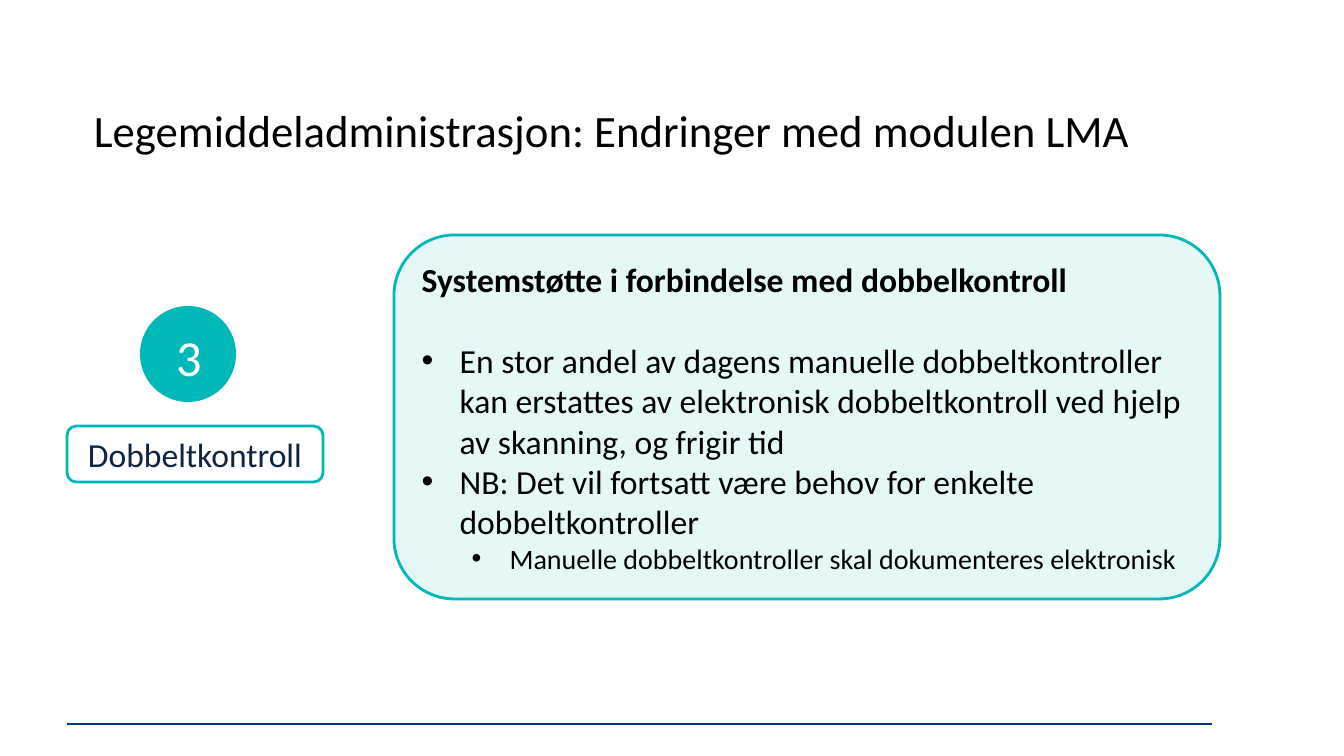
"""Build the slide about double checks in medication administration."""
from lxml import etree
from pptx import Presentation
from pptx.dml.color import RGBColor
from pptx.enum.shapes import MSO_CONNECTOR, MSO_SHAPE
from pptx.enum.text import MSO_ANCHOR, PP_ALIGN
from pptx.oxml.ns import qn
from pptx.util import Pt

PX = 914400 / 100.8
TEAL = RGBColor(0x00, 0xB8, 0xB7)
NAVY = RGBColor(0x0F, 0x24, 0x3E)
BLUE = RGBColor(0x04, 0x35, 0x85)
BLACK = RGBColor(0x00, 0x00, 0x00)
WHITE = RGBColor(0xFF, 0xFF, 0xFF)
ROUNDED, OVAL = MSO_SHAPE.ROUNDED_RECTANGLE, MSO_SHAPE.OVAL
LEFT, CENTER = PP_ALIGN.LEFT, PP_ALIGN.CENTER
MIDDLE = MSO_ANCHOR.MIDDLE


def px(*lengths):
    return [round(length * PX) for length in lengths]


def write(para, text, size=24, color=BLACK, bold=False, align=LEFT,
          bullet_left=None, level=0, before=0):
    para.alignment = align
    para.level = level
    para.space_before = Pt(before)
    if bullet_left:
        properties = para._p.get_or_add_pPr()
        left, hanging = px(bullet_left, -38)
        properties.set("marL", str(left))
        properties.set("indent", str(hanging))
        etree.SubElement(properties, qn("a:buFont")).set("typeface", "Arial")
        etree.SubElement(properties, qn("a:buChar")).set("char", "•")
    span = para.add_run()
    span.text = text
    span.font.name = "Calibri"
    span.font.size = Pt(size)
    span.font.bold = bold
    span.font.color.rgb = color


deck = Presentation()
deck.slide_width, deck.slide_height = px(1344, 756)
page = deck.slides.add_slide(deck.slide_layouts[6])

footer_line = page.shapes.add_connector(MSO_CONNECTOR.STRAIGHT, *px(67, 724, 1212, 724))
footer_line.line.color.rgb = BLUE
footer_line.line.width = Pt(1.25)
etree.SubElement(footer_line._element.spPr, qn("a:effectLst"))

shapes = []
for kind, bounds, fill, outlined in [
    (ROUNDED, (394, 235, 826, 364), TEAL, True),
    (ROUNDED, (67, 426, 256, 56), WHITE, True),
    (OVAL, (140, 306, 96, 96), TEAL, False),
]:
    shape = page.shapes.add_shape(kind, *px(*bounds))
    shape.shadow.inherit = False
    shape.fill.solid()
    shape.fill.fore_color.rgb = fill
    if outlined:
        shape.line.color.rgb = TEAL
        shape.line.width = Pt(2)
    else:
        shape.line.fill.background()
    shape.text_frame.word_wrap = True
    shape.text_frame.vertical_anchor = MIDDLE
    shapes.append(shape)
panel, label, circle = shapes

panel_color = panel._element.spPr.find(qn("a:solidFill"))[0]
etree.SubElement(panel_color, qn("a:alpha")).set("val", "10000")

write(panel.text_frame.paragraphs[0], "Systemstøtte i forbindelse med dobbelkontroll", bold=True)
for text, options in [
    ("En stor andel av dagens manuelle dobbeltkontroller kan erstattes av elektronisk "
     "dobbeltkontroll ved hjelp av skanning, og frigir tid", {"bullet_left": 38, "before": 29}),
    ("NB: Det vil fortsatt være behov for enkelte dobbeltkontroller", {"bullet_left": 38}),
    ("Manuelle dobbeltkontroller skal dokumenteres elektronisk",
     {"bullet_left": 88, "level": 1, "size": 20}),
]:
    write(panel.text_frame.add_paragraph(), text, **options)

write(label.text_frame.paragraphs[0], "Dobbeltkontroll", color=NAVY, align=CENTER)

for bounds, text, options in [
    ((139, 321, 100, 72), "3", {"size": 36, "color": WHITE, "align": CENTER}),
    ((84, 98, 1113, 78), "Legemiddeladministrasjon: Endringer med modulen LMA", {"size": 32}),
]:
    box = page.shapes.add_textbox(*px(*bounds))
    box.text_frame.word_wrap = True
    write(box.text_frame.paragraphs[0], text, **options)

deck.save("out.pptx")
